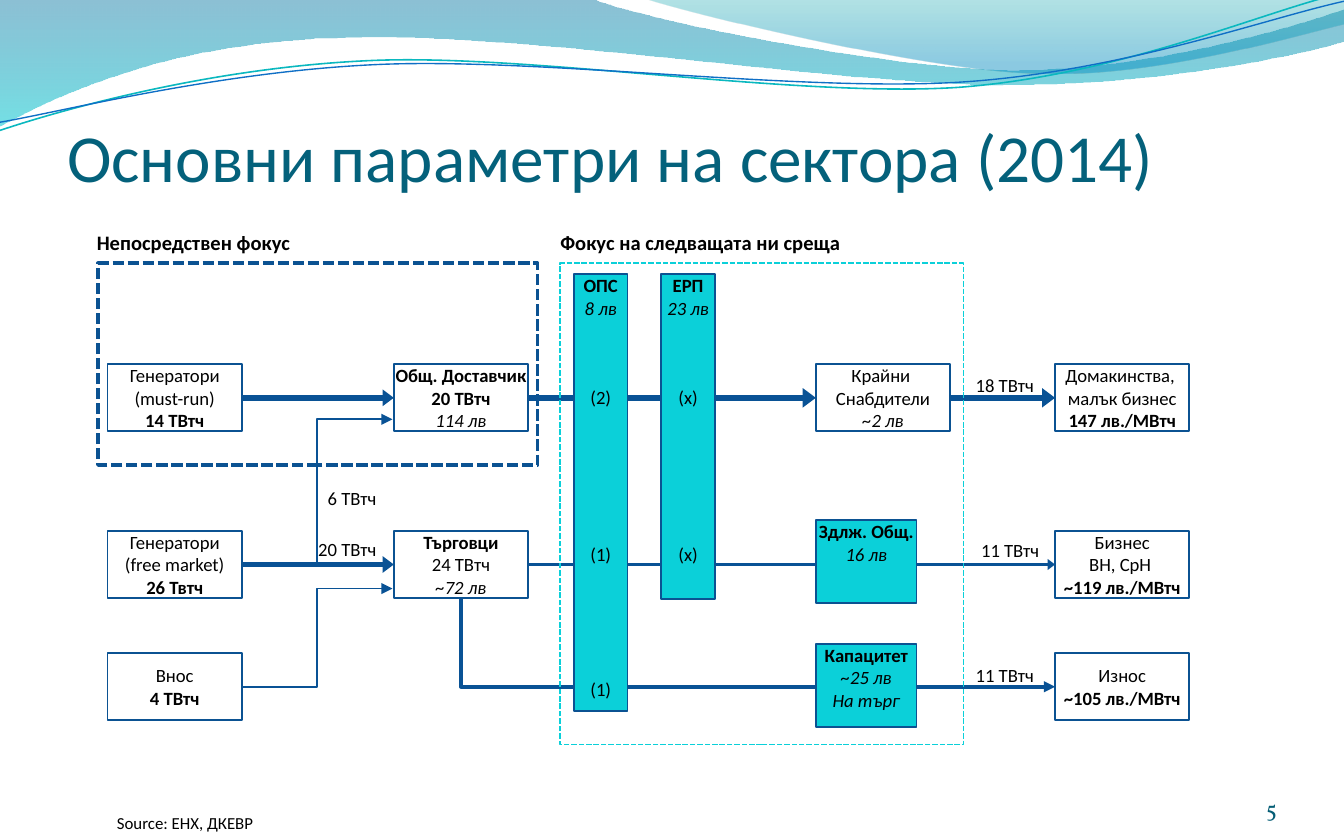
from lxml import etree
from pptx import Presentation
from pptx.dml.color import RGBColor
from pptx.enum.dml import MSO_LINE
from pptx.enum.shapes import MSO_CONNECTOR, MSO_SHAPE
from pptx.enum.text import MSO_ANCHOR, PP_ALIGN
from pptx.oxml.ns import qn
from pptx.util import Inches, Pt

RECT = MSO_SHAPE.RECTANGLE
STRAIGHT, ELBOW = MSO_CONNECTOR.STRAIGHT, MSO_CONNECTOR.ELBOW
DASH = MSO_LINE.SQUARE_DOT
TOP, MIDDLE, BOTTOM = MSO_ANCHOR.TOP, MSO_ANCHOR.MIDDLE, MSO_ANCHOR.BOTTOM
LEFT, CENTER, RIGHT = PP_ALIGN.LEFT, PP_ALIGN.CENTER, PP_ALIGN.RIGHT

COLORS = {
    "text": "000000", "title": "04617B", "number": "045D75",
    "border": "0B5292", "flow": "095295", "accent": "0BD0D9",
    "teal_line": "0AB8BF", "blue_line": "0F6FC6",
    "wave_blue": "0074A1", "wave_cyan": "00C6CF",
    "crest_teal": "00A1A9", "crest_blue": "008BBF",
}
FONT = "Calibri"
LINE_PT = 12
BOX_W, BOX_H = 1, 0.5
COL_SOURCE, COL_TRADE, COL_SUPPLY, COL_CLIENT = 0.8, 2.93, 6.07, 7.85
ROW_REGULATED, ROW_FREE, ROW_BORDER = 2.96, 4.2, 5.11


def rgb(name):
    return RGBColor.from_string(COLORS[name])


def set_text(shape, lines, size=10, align=CENTER, anchor=MIDDLE, inset=0.0,
             color="text", font=FONT, wrap=False):
    tf = shape.text_frame
    tf.word_wrap = wrap
    tf.vertical_anchor = anchor
    tf.margin_left = tf.margin_right = Inches(inset)
    tf.margin_top = tf.margin_bottom = 0
    for i, (text, style, gap) in enumerate(lines):
        p = tf.paragraphs[0] if i == 0 else tf.add_paragraph()
        p.text = text
        p.alignment = align
        p.space_before = Pt(gap * LINE_PT)
        p.font.size, p.font.name = Pt(size), font
        p.font.bold, p.font.italic = style == "b", style == "i"
        p.font.color.rgb = rgb(color)


def add_rect(s, x, y, w, h, fill=None, line="border", width=1.0, dash=None):
    sp = s.shapes.add_shape(RECT, Inches(x), Inches(y), Inches(w), Inches(h))
    sp.shadow.inherit = False
    if fill:
        sp.fill.solid()
        sp.fill.fore_color.rgb = rgb(fill)
    else:
        sp.fill.background()
    sp.line.color.rgb = rgb(line)
    sp.line.width = Pt(width)
    if dash:
        sp.line.dash_style = dash
    return sp


def add_box(s, x, row, *lines):
    sp = add_rect(s, x, row - BOX_H / 2, BOX_W, BOX_H)
    set_text(sp, [(text, style, 0) for text, style in lines], inset=0.04)


def add_tariff(s, x, y, w, h, *lines):
    sp = add_rect(s, x, y, w, h, fill="accent")
    set_text(sp, lines, anchor=TOP, inset=0.04)


def add_label(s, x, y, w, h, text, style="", **kw):
    sp = s.shapes.add_textbox(Inches(x), Inches(y), Inches(w), Inches(h))
    set_text(sp, [(text, style, 0)], **kw)


def add_arrow(s, x1, y1, x2, y2, width, kind=STRAIGHT):
    c = s.shapes.add_connector(kind, Inches(x1), Inches(y1), Inches(x2), Inches(y2))
    c.line.color.rgb = rgb("flow")
    c.line.width = Pt(width)
    ln = c._element.spPr.find(qn("a:ln"))
    head_length = "sm" if kind == STRAIGHT else "med"
    etree.SubElement(ln, qn("a:tailEnd"), type="triangle", len=head_length)
    etree.SubElement(c._element.spPr, qn("a:effectLst"))
    return c


def add_down_right_arrow(s, x1, y1, x2, y2, width):
    cx, cy = (x1 + x2) / 2, (y1 + y2) / 2
    dx, dy = (y2 - y1) / 2, (x2 - x1) / 2
    c = add_arrow(s, cx + dx, cy - dy, cx - dx, cy + dy, width, ELBOW)
    sp_pr = c._element.spPr
    sp_pr.find(qn("a:xfrm")).set("rot", "16200000")
    sp_pr.find(qn("a:prstGeom")).set("prst", "bentConnector2")


def add_curve(s, start, segments, close):
    points = [(Inches(x), Inches(y)) for seg in segments
              for x, y in zip(seg[::2], seg[1::2])]
    fb = s.shapes.build_freeform(Inches(start[0]), Inches(start[1]))
    fb.add_line_segments(points, close=close)
    sp = fb.convert_to_shape()
    sp.shadow.inherit = False
    lines = list(sp._element.spPr.iter(qn("a:lnTo")))
    for seg in segments:
        used, lines = lines[:len(seg) // 2], lines[len(seg) // 2:]
        if len(used) == 3:
            bezier = etree.Element(qn("a:cubicBezTo"))
            used[0].addprevious(bezier)
            for line in used:
                bezier.append(line[0])
                line.getparent().remove(line)
    return sp


def add_wave(s, start, segments, stops):
    sp = add_curve(s, start, segments, True)
    sp.line.fill.background()
    sp.fill.gradient()
    sp.fill.gradient_angle = 270
    for stop, (position, color, _) in zip(sp.fill.gradient_stops, stops):
        stop.position = position
        stop.color.rgb = rgb(color)
    for clr, (_, _, opacity) in zip(sp._element.spPr.iter(qn("a:srgbClr")), stops):
        etree.SubElement(clr, qn("a:alpha"), val=str(opacity * 1000))


def add_swoosh(s, start, segments, color, width):
    sp = add_curve(s, start, segments, False)
    sp.fill.background()
    sp.line.color.rgb = rgb(color)
    sp.line.width = Pt(width)


def add_header(s):
    add_wave(s, (0, 0), [(4.4, -0.01), (4.76, 0.14, 6.64, 0.52, 7.58, 0.52),
                         (8.53, 0.52, 9.58, 0.21, 10, 0.07), (10.01, 0.3),
                         (9.83, 0.37, 8.7, 0.63, 7.46, 0.63),
                         (6.22, 0.63, 3.82, 0.23, 2.57, 0.28),
                         (1.29, 0.3, 0.46, 0.69, -0.01, 0.94)],
             [(0, "wave_blue", 45), (1, "wave_cyan", 55)])
    add_wave(s, (4.79, -0.01), [(5.09, 0.09, 6.82, 0.51, 7.69, 0.54),
                                (8.56, 0.58, 9.61, 0.27, 10, 0.18), (10, 0)],
             [(0, "crest_teal", 30), (0.8, "crest_blue", 45)])
    add_swoosh(s, (0, 0.97), [(0.48, 0.81, 1.58, 0.5, 2.77, 0.45),
                              (3.95, 0.4, 5.92, 0.73, 7.13, 0.65),
                              (8.33, 0.56, 9.39, 0.09, 9.98, -0.05)], "teal_line", 0.85)
    add_swoosh(s, (0, 0.91), [(0.47, 0.83, 1.64, 0.53, 2.83, 0.48),
                              (4.03, 0.43, 5.97, 0.69, 7.17, 0.61),
                              (8.36, 0.53, 9.41, 0.14, 10, 0.01)], "blue_line", 0.75)
    add_label(s, 0.5, 0.46, 9, 1, "Основни параметри на сектора (2014)", size=36,
              align=LEFT, anchor=BOTTOM, color="title", wrap=True)


def add_flows(s):
    source_end, trade_end = COL_SOURCE + BOX_W, COL_TRADE + BOX_W
    add_arrow(s, trade_end, ROW_FREE, COL_CLIENT, ROW_FREE, 2)
    add_arrow(s, trade_end, ROW_REGULATED, COL_SUPPLY, ROW_REGULATED, 3.5)
    add_arrow(s, COL_SUPPLY + BOX_W, ROW_REGULATED, COL_CLIENT, ROW_REGULATED, 3.5)
    for row in (ROW_REGULATED, ROW_FREE):
        add_arrow(s, source_end, row, COL_TRADE, row, 3)
    add_arrow(s, source_end, ROW_FREE, 2.92, 3.12, 1.25, ELBOW)
    add_arrow(s, source_end, ROW_BORDER, 2.92, 4.38, 1, ELBOW)
    add_down_right_arrow(s, COL_TRADE + BOX_W / 2, ROW_FREE + BOX_H / 2,
                         COL_CLIENT, ROW_BORDER, 2)


def add_boxes(s):
    add_box(s, COL_SOURCE, ROW_REGULATED, ("Генератори", ""), ("(must-run)", ""), ("14 ТВтч", "b"))
    add_box(s, COL_SOURCE, ROW_FREE, ("Генератори", ""), ("(free market)", ""), ("26 Твтч", "b"))
    add_box(s, COL_SOURCE, ROW_BORDER, ("Внос", ""), ("4 ТВтч", "b"))
    add_box(s, COL_TRADE, ROW_REGULATED, ("Общ. Доставчик", "b"), ("20 ТВтч", "b"), ("114 лв", "i"))
    add_box(s, COL_TRADE, ROW_FREE, ("Търговци", "b"), ("24 ТВтч", ""), ("~72 лв", "i"))
    add_box(s, COL_SUPPLY, ROW_REGULATED, ("Крайни ", ""), ("Снабдители", ""), ("~2 лв", "i"))
    add_box(s, COL_CLIENT, ROW_REGULATED, ("Домакинства, ", ""), ("малък бизнес", ""), ("147 лв./МВтч", "b"))
    add_box(s, COL_CLIENT, ROW_FREE, ("Бизнес", ""), ("ВН, СрН ", ""), ("~119 лв./МВтч", "b"))
    add_box(s, COL_CLIENT, ROW_BORDER, ("Износ", ""), ("~105 лв./МВтч", "b"))
    add_tariff(s, 4.27, 2.04, 0.4, 3.25, ("ОПС", "b", 0), ("8 лв", "i", 0),
               ("(2)", "", 3), ("(1)", "", 6), ("(1)", "", 5))
    add_tariff(s, 4.92, 2.04, 0.4, 2.42, ("ЕРП", "b", 0), ("23 лв", "i", 0),
               ("(х)", "", 3), ("(х)", "", 6))
    add_tariff(s, COL_SUPPLY, 3.87, 0.75, 0.62, ("Здлж. Общ.", "b", 0), ("16 лв", "i", 0))
    add_tariff(s, COL_SUPPLY, 4.79, 0.75, 0.62, ("Капацитет", "b", 0),
               ("~25 лв", "i", 0), ("На търг", "i", 0))


def add_labels(s):
    for x, y, text in ((7.26, 2.78, "18 ТВтч"), (7.3, 4.01, "11 ТВтч"), (7.26, 4.94, "11 ТВтч")):
        add_label(s, x, y, 0.44, 0.17, text, align=LEFT)
    for y, text in ((3.62, "6 ТВтч"), (4, "20 ТВтч")):
        add_label(s, 2.26, y, 0.54, 0.17, text, align=RIGHT, wrap=True)
    add_label(s, 0.72, 1.71, 1.45, 0.19, "Непосредствен фокус", "b", size=11, align=LEFT)
    add_label(s, 4.17, 1.71, 2.1, 0.19, "Фокус на следващата ни среща", "b", size=11, align=LEFT)
    add_label(s, 0.87, 6.05, 1.1, 0.15, "Source: ЕНХ, ДКЕВР", size=9, align=LEFT)
    add_label(s, 8.67, 5.79, 0.83, 0.33, "5", size=12, align=RIGHT, anchor=BOTTOM,
              color="number", font="Vollkorn", wrap=True)


def main():
    prs = Presentation()
    prs.slide_width, prs.slide_height = Inches(10), Inches(6.25)
    s = prs.slides.add_slide(prs.slide_layouts[6])
    add_header(s)
    add_flows(s)
    add_boxes(s)
    add_rect(s, 0.73, 1.96, 3.27, 1.5, width=2, dash=DASH)
    add_rect(s, 4.17, 1.96, 3, 3.58, line="accent", dash=DASH)
    add_labels(s)
    prs.save("out.pptx")


if __name__ == "__main__":
    main()
